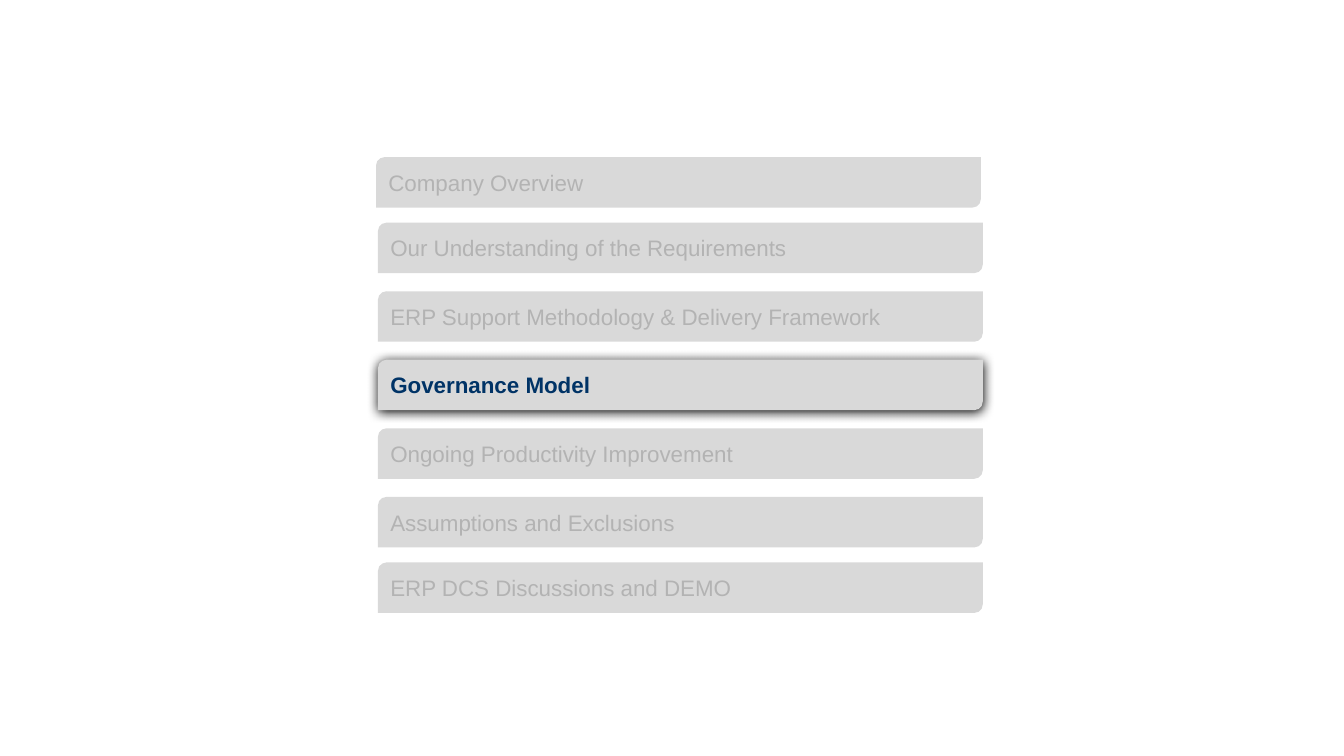
from lxml import etree
from pptx import Presentation
from pptx.dml.color import RGBColor
from pptx.enum.shapes import MSO_SHAPE
from pptx.enum.text import MSO_ANCHOR, PP_ALIGN
from pptx.oxml.ns import qn
from pptx.util import Pt

BAR = MSO_SHAPE.ROUND_2_DIAG_RECTANGLE
MIDDLE = MSO_ANCHOR.MIDDLE
LEFT = PP_ALIGN.LEFT

SILVER = RGBColor(0xD9, 0xD9, 0xD9)
GREY = RGBColor(0xB3, 0xB3, 0xB3)
NAVY = RGBColor(0x00, 0x33, 0x66)

WIDTH, HEIGHT = 432, 36
# Left edge, top edge and wording of each agenda bar, in points
AGENDA = [
    (268.6, 112.3, "Company Overview"),
    (270, 159.1, "Our Understanding of the Requirements"),
    (270, 208.1, "ERP Support Methodology & Delivery Framework"),
    (270, 257, "Governance Model"),
    (270, 306, "Ongoing Productivity Improvement"),
    (270, 355, "Assumptions and Exclusions"),
    (270, 401.8, "ERP DCS Discussions and DEMO"),
]
CURRENT = "Governance Model"


def add_glow(bar):
    """Give the bar a soft black shadow, falling straight down."""
    effects = bar._element.spPr.find(qn("a:effectLst"))
    shadow = etree.SubElement(
        effects, qn("a:outerShdw"), blurRad=str(Pt(8.5)), dist=str(Pt(1)),
        dir="5400000", algn="t", rotWithShape="0")
    etree.SubElement(shadow, qn("a:srgbClr"), val="000000")


def add_bar(slide, left, top, text, active):
    bar = slide.shapes.add_shape(BAR, Pt(left), Pt(top), Pt(WIDTH), Pt(HEIGHT))
    bar.fill.solid()
    bar.fill.fore_color.rgb = SILVER
    bar.line.fill.background()
    bar.shadow.inherit = False
    if active:
        add_glow(bar)

    frame = bar.text_frame
    frame.text = text
    frame.word_wrap = True
    frame.vertical_anchor = MIDDLE
    label = frame.paragraphs[0]
    label.alignment = LEFT
    font = label.runs[0].font
    font.name = "Arial"
    font.size = Pt(16)
    font.bold = active
    font.color.rgb = NAVY if active else GREY


def main():
    deck = Presentation()
    deck.slide_width, deck.slide_height = Pt(960), Pt(540)
    slide = deck.slides.add_slide(deck.slide_layouts.get_by_name("Blank"))
    for left, top, text in AGENDA:
        add_bar(slide, left, top, text, text == CURRENT)
    deck.save("out.pptx")


if __name__ == "__main__":
    main()
